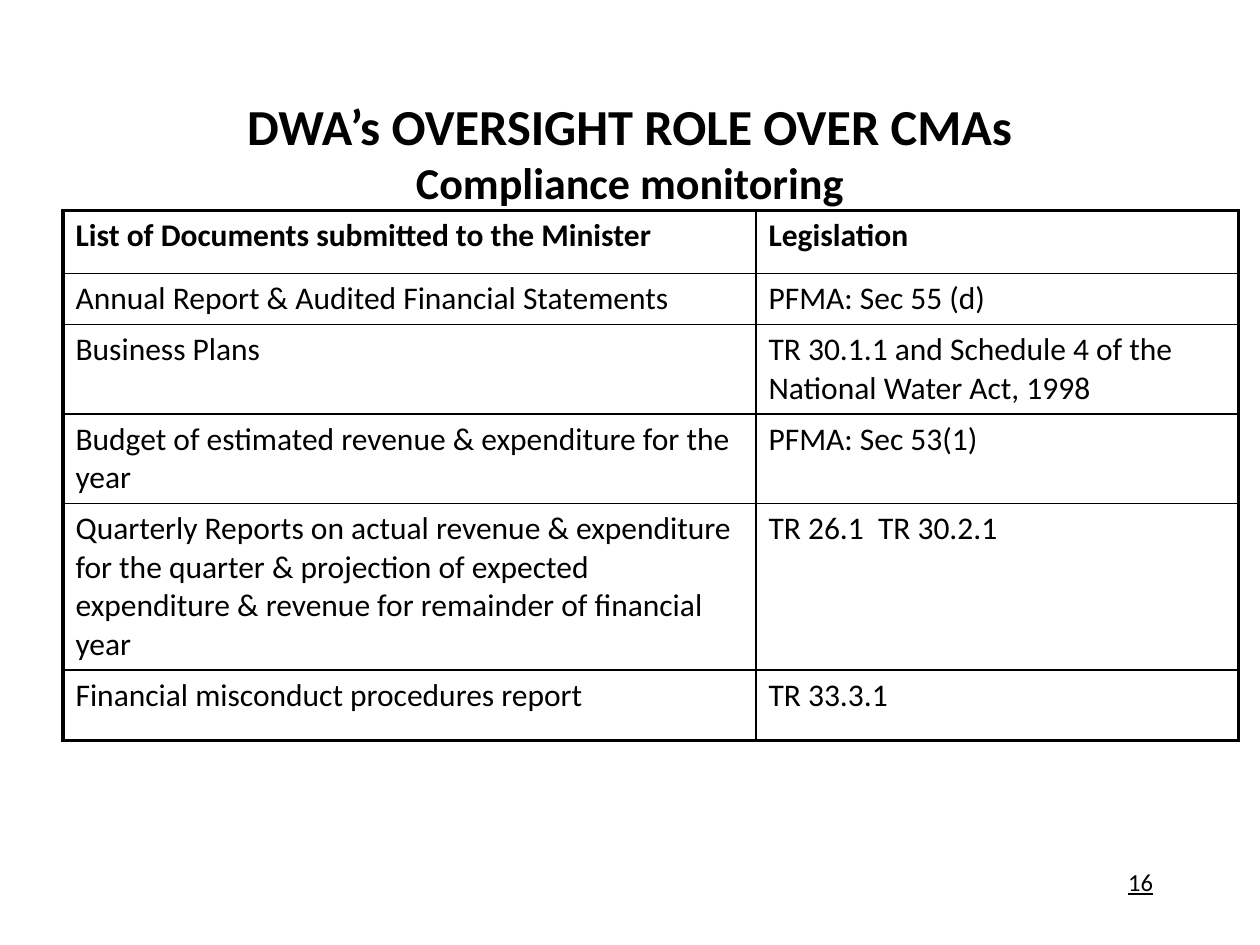
from lxml import etree
from pptx import Presentation
from pptx.dml.color import RGBColor
from pptx.enum import text
from pptx.oxml.ns import qn
from pptx.util import Inches, Pt

FONT = "Calibri"
INK = "000000"
THIN, THICK = 1, 2.25
COLUMN_WIDTHS = [5.5, 3.83]
ROW_HEIGHTS = [0.5, 0.4, 0.71, 0.71, 1.32, 0.56]
DOCUMENTS = [
    ("List of Documents submitted to the Minister", "Legislation"),
    ("Annual Report & Audited Financial Statements", "PFMA: Sec 55 (d)"),
    ("Business Plans", "TR 30.1.1 and Schedule 4 of the National Water Act, 1998"),
    ("Budget of estimated revenue & expenditure for the year", "PFMA: Sec 53(1)"),
    ("Quarterly Reports on actual revenue & expenditure for the quarter & projection "
     "of expected expenditure & revenue for remainder of financial year",
     "TR 26.1  TR 30.2.1"),
    ("Financial misconduct procedures report", "TR 33.3.1"),
]


def color(value):
    return RGBColor.from_string(value)


def style(font, size, bold=False):
    font.name = FONT
    font.size = Pt(size)
    font.bold = bold
    font.color.rgb = color(INK)


def add_title(page, left, top, width, height):
    title = page.shapes.title
    title.left, title.top = Inches(left), Inches(top)
    title.width, title.height = Inches(width), Inches(height)
    frame = title.text_frame
    frame.auto_size = text.MSO_AUTO_SIZE.NONE
    frame.vertical_anchor = text.MSO_ANCHOR.MIDDLE
    para = frame.paragraphs[0]
    para.alignment = text.PP_ALIGN.CENTER
    style(para.font, 28.8, bold=True)
    para.add_run().text = "DWA’s OVERSIGHT ROLE OVER CMAs"
    para.add_line_break()
    subtitle = para.add_run()
    subtitle.text = "Compliance monitoring"
    subtitle.font.size = Pt(25.2)


def set_borders(cell, widths):
    """Draw the cell borders; widths are left, right, top, bottom in points."""
    properties = cell._tc.get_or_add_tcPr()
    for index, (side, width) in enumerate(zip("LRTB", widths)):
        line = etree.Element(qn(f"a:ln{side}"), w=str(Pt(width)))
        fill = etree.SubElement(line, qn("a:solidFill"))
        etree.SubElement(fill, qn("a:srgbClr"), val=INK)
        properties.insert(index, line)


def add_documents_table(page, left, top):
    rows, columns = len(DOCUMENTS), len(COLUMN_WIDTHS)
    table = page.shapes.add_table(
        rows, columns, Inches(left), Inches(top),
        Inches(sum(COLUMN_WIDTHS)), Inches(sum(ROW_HEIGHTS))).table
    table.horz_banding = False
    for column, width in zip(table.columns, COLUMN_WIDTHS):
        column.width = Inches(width)
    for r, (height, entries) in enumerate(zip(ROW_HEIGHTS, DOCUMENTS)):
        table.rows[r].height = Inches(height)
        for c, entry in enumerate(entries):
            cell = table.cell(r, c)
            cell.text = entry
            cell.fill.background()
            style(cell.text_frame.paragraphs[0].font, 18, bold=r == 0)
            # Thick outer frame, thin inner rules
            outer = (c == 0, c == columns - 1, r == 0, r == rows - 1)
            set_borders(cell, [THICK if edge else THIN for edge in outer])


def add_page_number(page, left, top, width, height):
    box = page.shapes.add_textbox(
        Inches(left), Inches(top), Inches(width), Inches(height))
    box.text_frame.word_wrap = True
    para = box.text_frame.paragraphs[0]
    para.text = "16"
    para.alignment = text.PP_ALIGN.RIGHT
    style(para.font, 14)
    para.font.underline = True


def main():
    deck = Presentation()
    deck.slide_width, deck.slide_height = Inches(10), Inches(7.5)
    page = deck.slides.add_slide(deck.slide_layouts[5])
    add_title(page, 0.75, 0.83, 8.5, 0.75)
    add_documents_table(page, 0.5, 1.67)
    add_page_number(page, 7.17, 6.83, 2.08, 0.5)
    deck.save("out.pptx")


if __name__ == "__main__":
    main()
